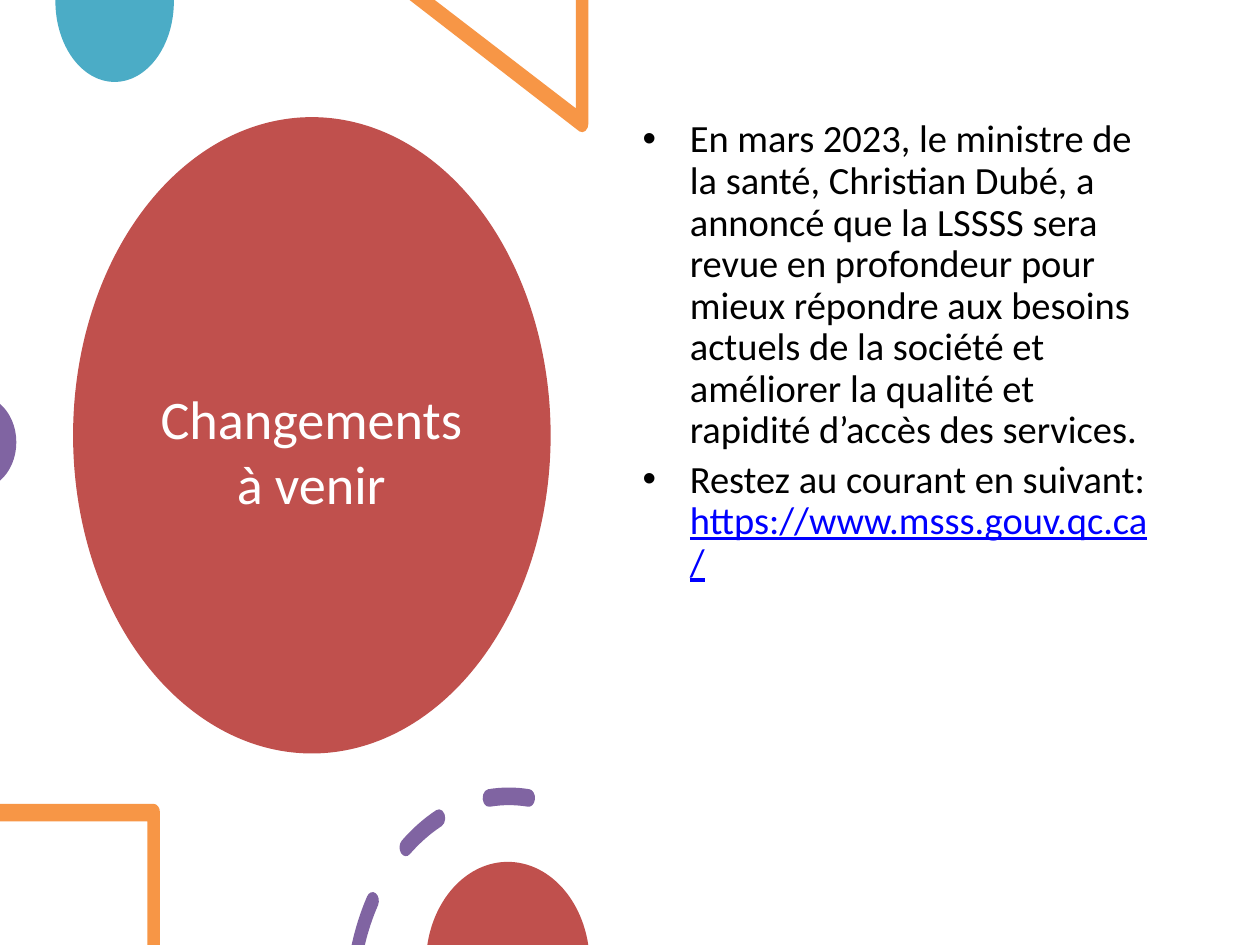
from math import ceil, cos, radians, sin, tan

from lxml import etree
from pptx import Presentation
from pptx.dml.color import RGBColor
from pptx.enum.shapes import MSO_SHAPE
from pptx.enum.text import MSO_ANCHOR, MSO_AUTO_SIZE, PP_ALIGN
from pptx.oxml.ns import qn
from pptx.util import Inches, Pt

OVAL = MSO_SHAPE.OVAL
MID, TOP = MSO_ANCHOR.MIDDLE, MSO_ANCHOR.TOP
CENTER, LEFT = PP_ALIGN.CENTER, PP_ALIGN.LEFT
FIXED = MSO_AUTO_SIZE.NONE

RED, TEAL, ORANGE, PURPLE = "C0504D", "4BACC6", "F79646", "8064A2"
WHITE, BLACK, BLUE = "FFFFFF", "000000", "0000FF"
WIDE, HIGH = 10, 7.5


def color(code):
    return RGBColor.from_string(code)


def arc(mid, radii, start, end):
    """A start point, then curves of up to 90 degrees; angles run clockwise."""
    count = ceil(abs(end - start) / 90)
    step = radians(end - start) / count
    pull = 4 / 3 * tan(step / 4)

    def spot(turn, lean=0):
        return (mid[0] + radii[0] * (cos(turn) - lean * sin(turn)),
                mid[1] + radii[1] * (sin(turn) + lean * cos(turn)))

    turns = [radians(start) + step * i for i in range(count + 1)]
    return [spot(turns[0])] + [spot(a, pull) + spot(b, -pull) + spot(b)
                               for a, b in zip(turns, turns[1:])]


class Deck:
    font = "Calibri"

    def __init__(self):
        self.prs = Presentation()
        self.prs.slide_width, self.prs.slide_height = Inches(WIDE), Inches(HIGH)
        self.slide = self.prs.slides.add_slide(self.prs.slide_layouts[1])
        self.shapes = self.slide.shapes

    def paint(self, shape, code):
        shape.shadow.inherit = False
        shape.fill.solid()
        shape.fill.fore_color.rgb = color(code)
        shape.line.fill.background()

    def oval(self, box, code):
        self.paint(self.shapes.add_shape(OVAL, *map(Inches, box)), code)

    def outline(self, code, *loops):
        """One filled shape of closed loops; a step is a point or a curve."""
        loops = [[tuple(map(Inches, step)) for step in loop] for loop in loops]
        pen = self.shapes.build_freeform(*loops[0][0])
        for i, loop in enumerate(loops):
            if i:
                pen.move_to(*loop[0])
            pen.add_line_segments([step[-2:] for step in loop[1:]], close=True)
        shape = pen.convert_to_shape()

        # Bend the line segments that stand for curves
        nodes = list(shape.element.iter(qn("a:moveTo"), qn("a:lnTo")))
        for node, step in zip(nodes, sum(loops, [])):
            if len(step) == 6:
                node.tag = qn("a:cubicBezTo")
                for i in (0, 1):
                    x, y = step[2 * i] - shape.left, step[2 * i + 1] - shape.top
                    node.insert(i, etree.Element(qn("a:pt"), x=str(x), y=str(y)))
        self.paint(shape, code)

    def text(self, holder, box, paras, size, anchor, **form):
        """Fill a placeholder; each paragraph is a list of (text, colour, underline)."""
        for name, value in zip(("left", "top", "width", "height"), box):
            setattr(holder, name, Inches(value))
        frame = holder.text_frame
        for name, value in {"word_wrap": True, "auto_size": FIXED,
                            "vertical_anchor": anchor}.items():
            setattr(frame, name, value)
        for i, runs in enumerate(paras):
            para = frame.add_paragraph() if i else frame.paragraphs[0]
            for name, value in form.items():
                setattr(para, name, value)
            for words, code, under in runs:
                run = para.add_run()
                run.text = words
                look = {"name": self.font, "size": Pt(size), "underline": under}
                for name, value in look.items():
                    setattr(run.font, name, value)
                run.font.color.rgb = color(code)
        # Bring the text in front of the shapes drawn so far
        holder.element.getparent().append(holder.element)


def dash(mid, ring, pen, start, end):
    """A round-ended dash on a ring; without a start the slide's edge cuts it."""
    outer = [r + p for r, p in zip(ring, pen)]
    inner = [r - p for r, p in zip(ring, pen)]

    def cap(angle, turn):
        t = radians(angle)
        spot = (mid[0] + ring[0] * cos(t), mid[1] + ring[1] * sin(t))
        return arc(spot, pen, angle + turn, angle + turn + 180)[1:]

    # Angles where the ring's two edges meet the slide's bottom
    first, last = (196.1, 197.6) if start is None else (start, start)
    loop = arc(mid, outer, first, end) + cap(end, 0) + arc(mid, inner, end, last)[1:]
    return loop if start is None else loop + cap(start, 180)


def main():
    deck = Deck()

    # Title on the large oval
    deck.oval((0.58, 0.93, 3.79, 5.05), RED)
    deck.text(deck.shapes.title, (1.14, 1.35, 2.66, 4.45),
              [[("Changements à venir", WHITE, None)]], 31, MID, alignment=CENTER)

    # Shapes cut by the top and left edges
    nib = (0.05, 0.07)
    deck.outline(TEAL, [(0.44, 0), (1.38, 0)]
                 + arc((0.91, 0.01), (0.47, 0.64), 0, 180))
    deck.outline(ORANGE, [(4.67, 0), (4.57, 0), (4.57, 0.86), (3.45, 0), (3.25, 0)]
                 + arc((4.62, 0.98), nib, 115, 0))
    deck.outline(PURPLE, arc((-0.17, 3.51), (0.3, 0.37), -55.5, 55.5))

    # Bullet list
    news = ("En mars 2023, le ministre de la santé, Christian Dubé, a annoncé que la "
            "LSSSS sera revue en profondeur pour mieux répondre aux besoins actuels de "
            "la société et améliorer la qualité et rapidité d’accès des services.")
    deck.text(deck.slide.placeholders[1], (5, 0.9, 4.31, 5.35),
              [[(news, BLACK, None)],
               [("Restez au courant en suivant: ", BLACK, None),
                ("https://www.msss.gouv.qc.ca/", BLUE, True)]],
              22, TOP, alignment=LEFT, line_spacing=0.9)

    # Shapes cut by the bottom edge
    deck.outline(ORANGE, [(0, 6.38)] + arc((1.22, 6.45), nib, -90, 0)
                 + [(1.27, HIGH), (1.17, HIGH), (1.17, 6.52), (0, 6.52)])
    ends = [210 + 33.6 * i for i in range(3)]
    deck.outline(PURPLE, *[dash((4.04, 7.98), (1.25, 1.66), (0.05, 0.07),
                                end - 14.5 if i else None, end)
                           for i, end in enumerate(ends)])
    deck.outline(RED, arc((4.03, 7.65), (0.65, 0.81), 190.7, 349.3))

    deck.prs.save("out.pptx")


if __name__ == "__main__":
    main()
